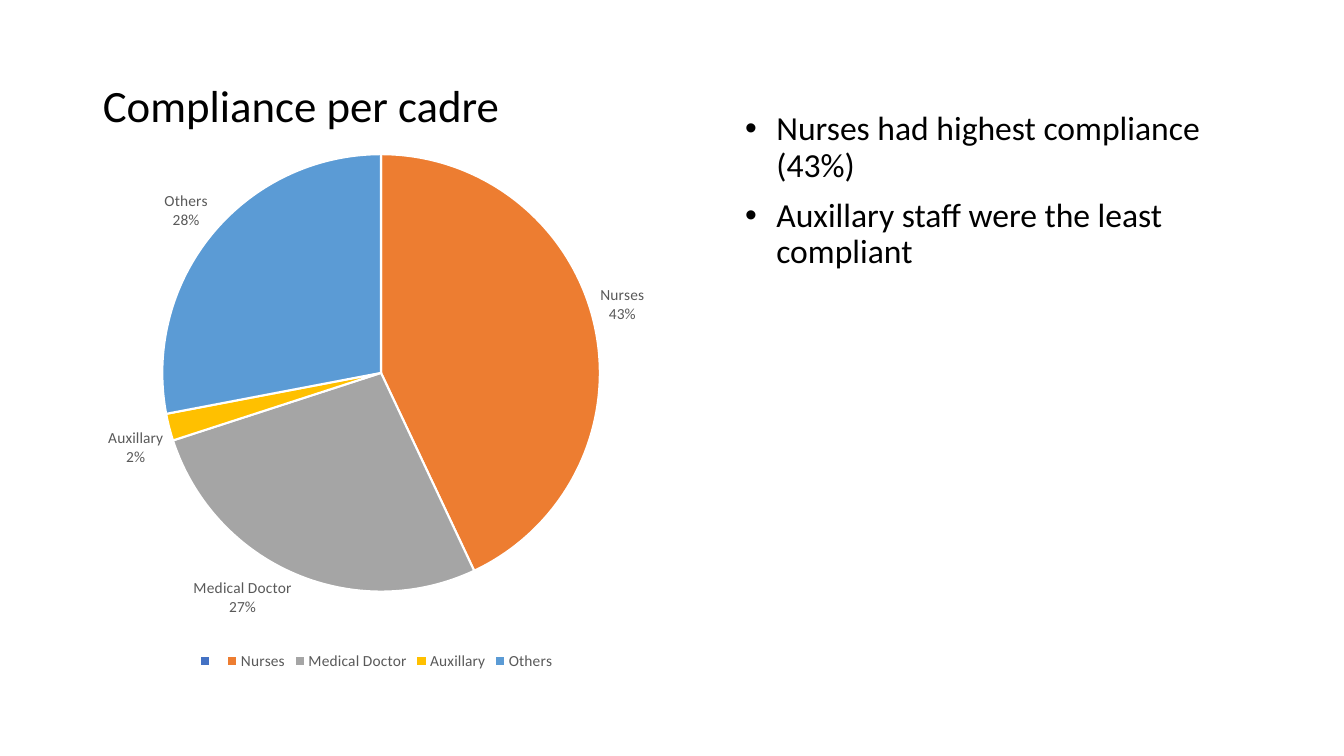
from pptx import Presentation
from pptx.chart.data import CategoryChartData
from pptx.dml.color import RGBColor
from pptx.enum.chart import XL_CHART_TYPE, XL_LABEL_POSITION, XL_LEGEND_POSITION
from pptx.enum.text import MSO_ANCHOR, MSO_AUTO_SIZE, PP_ALIGN
from pptx.oxml import parse_xml
from pptx.oxml.ns import nsdecls
from pptx.util import Inches, Pt

PIE = XL_CHART_TYPE.PIE
OUTER = XL_LABEL_POSITION.OUTSIDE_END
BOTTOM = XL_LEGEND_POSITION.BOTTOM
LOW, TOP = MSO_ANCHOR.BOTTOM, MSO_ANCHOR.TOP
NO_FIT = MSO_AUTO_SIZE.NONE
LEFT = PP_ALIGN.LEFT


class Theme:
    font = "Calibri"
    ink, gray, white = "000000", "595959", "FFFFFF"
    slices = ["4472C4", "ED7D31", "A5A5A5", "FFC000", "5B9BD5"]
    title, body, chart, label = 32, 24, 10, 11


CADRES = ["", "Nurses", "Medical Doctor", "Auxillary", "Others"]
SHARES = [None, 43, 27, 2, 28]
POINTS = [
    "Nurses had highest compliance (43%)",
    "Auxillary staff were the least compliant",
]


def apply(item, values):
    for name, value in values.items():
        setattr(item, name, value)


def style(font, size, color):
    apply(font, {"name": Theme.font, "size": Pt(size)})
    font.color.rgb = RGBColor.from_string(color)


def fill_text(holder, box, lines, size, anchor):
    """Place a placeholder and write one paragraph per line."""
    names = ("left", "top", "width", "height")
    apply(holder, dict(zip(names, map(Inches, box))))
    frame = holder.text_frame
    apply(frame, {"text": "\n".join(lines), "word_wrap": True,
                  "auto_size": NO_FIT, "vertical_anchor": anchor})
    for para in frame.paragraphs:
        apply(para, {"alignment": LEFT, "line_spacing": 0.9, "space_before": Pt(0)})
        style(para.runs[0].font, size, Theme.ink)
    return frame.paragraphs


def add_bullet(para):
    para.space_before = Pt(10)
    props = para._p.get_or_add_pPr()
    indent = Inches(0.31)
    props.set("marL", str(indent))
    props.set("indent", str(-indent))
    props.append(parse_xml(f'<a:buFont {nsdecls("a")} typeface="Arial"/>'))
    props.append(parse_xml(f'<a:buChar {nsdecls("a")} char="•"/>'))


def set_layout(chart, box, disc):
    """Fix the pie's left, top and side, given in inches on the slide."""
    left, top, width, height = box
    x, y, side = disc
    shares = ((x - left) / width, (y - top) / height, side / width, side / height)
    area = chart._chartSpace.chart.plotArea
    for old in area.findall("{*}layout"):
        area.remove(old)
    sizes = "".join(f'<c:{key} val="{val:.4f}"/>' for key, val in zip("xywh", shares))
    area.insert(0, parse_xml(
        f'<c:layout {nsdecls("c")}><c:manualLayout>'
        '<c:layoutTarget val="inner"/><c:xMode val="edge"/><c:yMode val="edge"/>'
        f'{sizes}</c:manualLayout></c:layout>'))


def add_pie(slide, box, disc):
    data = CategoryChartData()
    data.categories = CADRES
    data.add_series("Series 1", SHARES)
    chart = slide.shapes.add_chart(PIE, *map(Inches, box), data).chart
    apply(chart, {"has_title": False, "has_legend": True})
    style(chart.font, Theme.chart, Theme.ink)
    set_layout(chart, box, disc)

    # Legend
    apply(chart.legend, {"position": BOTTOM, "include_in_layout": False})
    style(chart.legend.font, Theme.label, Theme.gray)

    # Slices
    plot = chart.plots[0]
    plot.vary_by_categories = True
    series = plot.series[0]
    for place, color in enumerate(Theme.slices):
        form = series.points[place].format
        form.fill.solid()
        form.fill.fore_color.rgb = RGBColor.from_string(color)
        form.line.color.rgb = RGBColor.from_string(Theme.white)
        form.line.width = Pt(1.5)

    # Labels
    labels = series.data_labels
    apply(labels, {"show_percentage": True, "show_category_name": True,
                   "show_value": False, "position": OUTER,
                   "number_format": "0%", "number_format_is_linked": False})
    style(labels.font, Theme.label, Theme.gray)


def main():
    deck = Presentation()
    apply(deck, {"slide_width": Inches(13.33), "slide_height": Inches(7.5)})
    slide = deck.slides.add_slide(deck.slide_layouts[1])

    # Title, chart and findings
    fill_text(slide.shapes.title, (0.92, 0.5, 4.3, 0.86),
              ["Compliance per cadre"], Theme.title, LOW)
    add_pie(slide, (0.36, 1.36, 6.75, 5.33), (1.61, 1.53, 4.34))
    for para in fill_text(slide.placeholders[1], (7.29, 1.06, 4.96, 4.78),
                          POINTS, Theme.body, TOP):
        add_bullet(para)

    deck.save("out.pptx")


if __name__ == "__main__":
    main()
